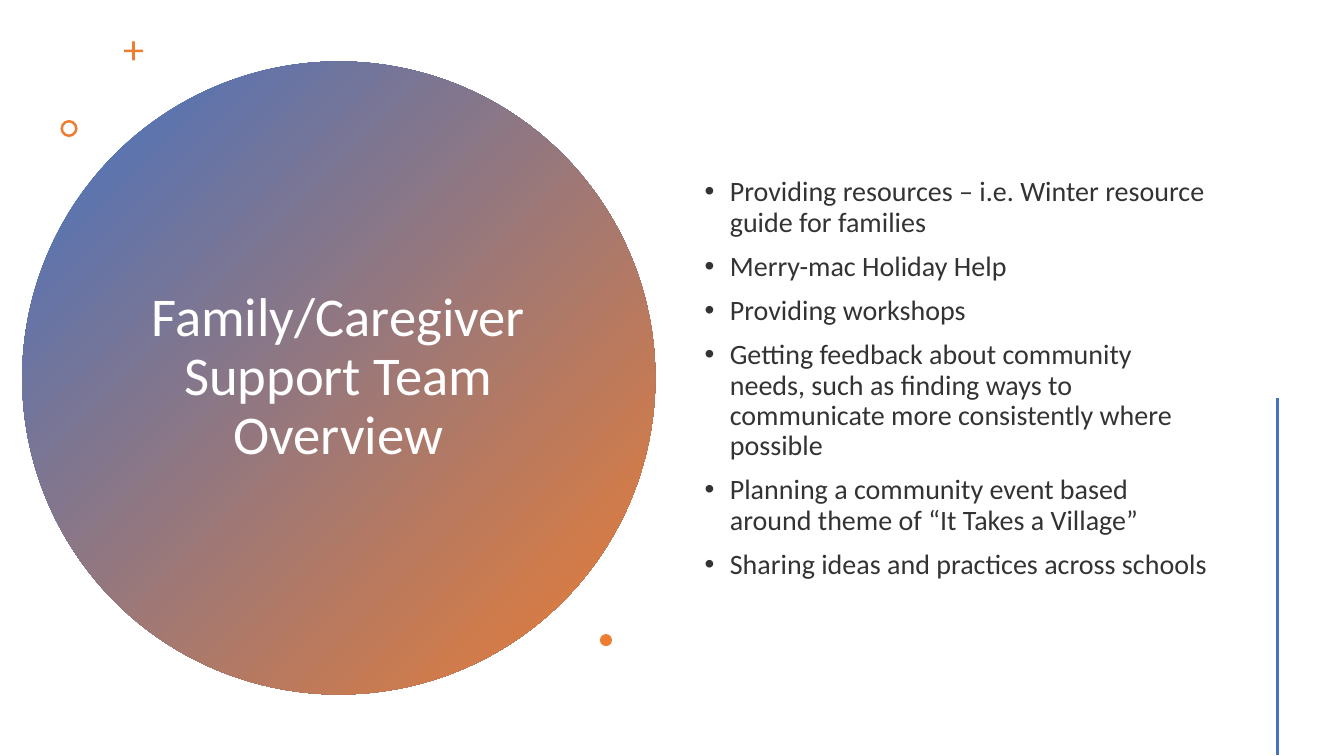
from pptx import Presentation
from pptx import util as u
from pptx.dml import color
from pptx.enum import shapes, text
from lxml import etree

TITLE = "Family/Caregiver Support Team Overview"
TASKS = [
    "Providing resources – i.e. Winter resource guide for families",
    "Merry-mac Holiday Help",
    "Providing workshops",
    "Getting feedback about community needs, such as finding ways to communicate more consistently where possible",
    "Planning a community event based around theme of “It Takes a Village”",
    "Sharing ideas and practices across schools",
]
BLUE, ORANGE, WHITE, INK = "4472C4", "ED7D31", "FFFFFF", "333333"
KIND = shapes.MSO_SHAPE
DISC = (0.22, 0.61, 6.28, 6.28)
MARKS = [
    (KIND.CROSS, (1.23, 0.41, 0.19, 0.19), 0.43),
    (KIND.DONUT, (0.6, 1.19, 0.17, 0.17), 0.15),
    (KIND.OVAL, (5.95, 6.29, 0.12, 0.12), None),
]
HEAD = {"size": u.Pt(39), "name": "Calibri"}
BODY = {"size": u.Pt(20), "name": "Calibri"}
MID = {"alignment": text.PP_ALIGN.CENTER, "line_spacing": 0.9}
ITEM = {"alignment": text.PP_ALIGN.LEFT, "line_spacing": 0.9, "space_before": u.Pt(10)}
FRAME = {"word_wrap": True, "vertical_anchor": text.MSO_ANCHOR.MIDDLE}
NS = "{http://schemas.openxmlformats.org/drawingml/2006/main}"


def rgb(code):
    return color.RGBColor.from_string(code)


def put(thing, form):
    for key, val in form.items():
        setattr(thing, key, val)


def shape(kind, box):
    item = slide.shapes.add_shape(kind, *map(u.Inches, box))
    item.shadow.inherit = False
    item.line.fill.background()
    return item


def write(box, lines, font, para, ink, dots=False):
    frame = slide.shapes.add_textbox(*map(u.Inches, box)).text_frame
    put(frame, FRAME)
    frame.text = "\n".join(lines)
    for par in frame.paragraphs:
        put(par, para)
        put(par.runs[0].font, font)
        par.runs[0].font.color.rgb = rgb(ink)
        if dots:
            prop = par._p.get_or_add_pPr()
            prop.set("marL", str(u.Inches(0.25)))
            prop.set("indent", str(u.Inches(-0.25)))
            etree.SubElement(prop, NS + "buFont", typeface="Arial")
            etree.SubElement(prop, NS + "buChar", char="•")


deck = Presentation()
put(deck, {"slide_width": u.Inches(13.33), "slide_height": u.Inches(7.5)})
slide = deck.slides.add_slide(deck.slide_layouts[6])

disc = shape(KIND.OVAL, DISC)
disc.fill.gradient()
disc.fill.gradient_angle = 315
for stop, code, pos in zip(disc.fill.gradient_stops, (BLUE, ORANGE), (0, 1)):
    stop.color.rgb = rgb(code)
    stop.position = pos

write((1.36, 1.41, 3.99, 4.67), [TITLE], HEAD, MID, WHITE)

for kind, box, thick in MARKS:
    mark = shape(kind, box)
    mark.fill.solid()
    mark.fill.fore_color.rgb = rgb(ORANGE)
    if thick:
        mark.adjustments[0] = thick

write((6.89, 0.57, 5.22, 6.38), TASKS, BODY, ITEM, INK, dots=True)

rule = slide.shapes.add_connector(
    shapes.MSO_CONNECTOR.STRAIGHT, *map(u.Inches, (12.67, 3.95, 12.67, 7.49)))
rule.line.width = u.Pt(2)
rule.line.color.rgb = rgb(BLUE)
etree.SubElement(rule._element.spPr, NS + "effectLst")

deck.save("out.pptx")
